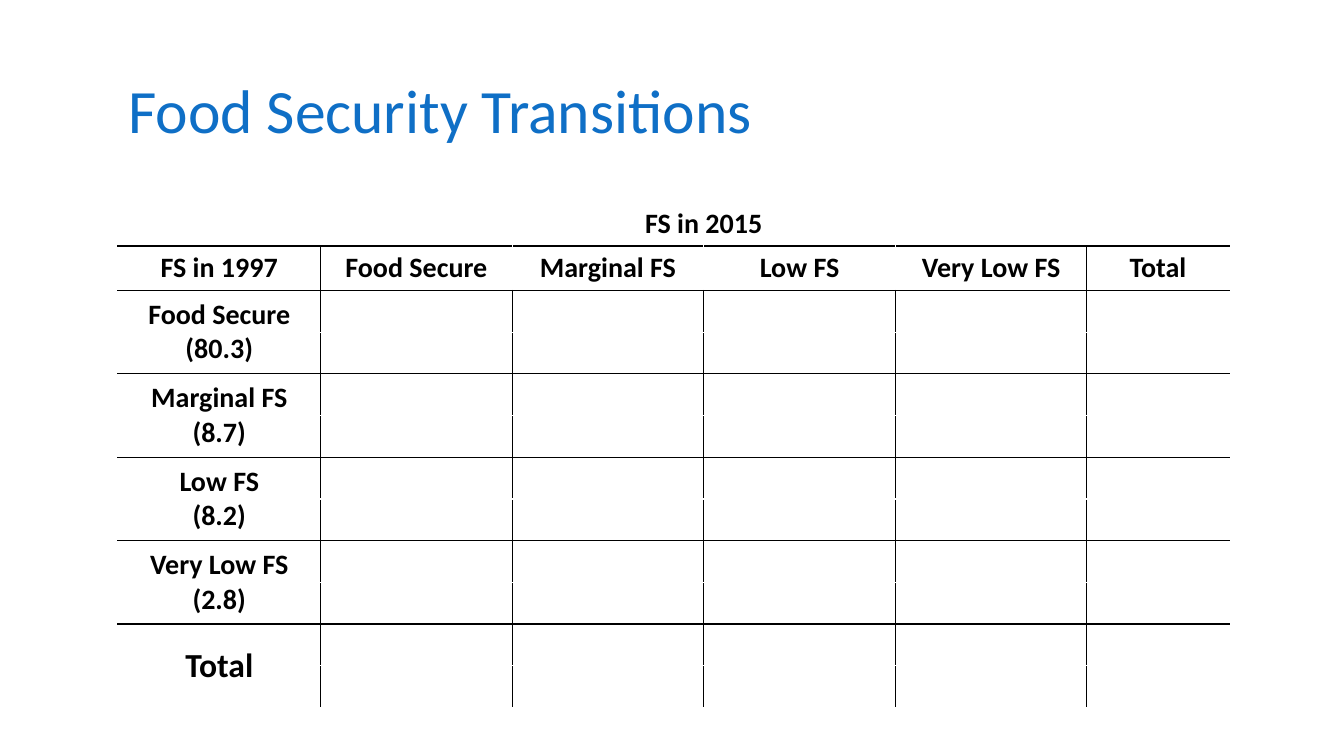
"""Build the food security transitions slide with its empty transition table."""
from lxml import etree
from pptx import Presentation
from pptx.dml.color import RGBColor
from pptx.enum import text
from pptx.oxml import ns
from pptx.util import Inches, Pt

BLUE = RGBColor(0x0F, 0x6F, 0xC6)
BLACK = RGBColor(0, 0, 0)
WHITE = RGBColor(255, 255, 255)
FONT = "Calibri"
TOP, MIDDLE, BOTTOM = (text.MSO_ANCHOR.TOP, text.MSO_ANCHOR.MIDDLE,
                       text.MSO_ANCHOR.BOTTOM)

COLUMN_WIDTHS = [2.01, 1.9, 1.9, 1.9, 1.9, 1.41]
ROW_COUNT = 12
TABLE_HEIGHT = 4.97
HEADINGS = ["FS in 1997", "Food Secure", "Marginal FS", "Low FS", "Very Low FS", "Total"]
SHARES = ["(80.3)", "(8.7)", "(8.2)", "(2.8)"]


def add_border(cell, side, color):
    line = etree.SubElement(cell._tc.get_or_add_tcPr(), ns.qn(f"a:ln{side}"), w=str(Pt(1)))
    fill = etree.SubElement(line, ns.qn("a:solidFill"))
    etree.SubElement(fill, ns.qn("a:srgbClr"), val=str(color))


def write_cell(cell, words, anchor=MIDDLE, size=20):
    cell.vertical_anchor = anchor
    para = cell.text_frame.paragraphs[0]
    para.alignment = text.PP_ALIGN.CENTER
    span = para.add_run()
    span.text = words
    for name, value in {"name": FONT, "size": Pt(size), "bold": True}.items():
        setattr(span.font, name, value)
    span.font.color.rgb = BLACK


deck = Presentation()
deck.slide_width, deck.slide_height = Inches(13.33), Inches(7.5)
page = deck.slides.add_slide(deck.slide_layouts[5])

title = page.shapes.title
place = {"left": 1.17, "top": 0.4, "width": 11, "height": 1.45}
for name, value in place.items():
    setattr(title, name, Inches(value))
title.text_frame.text = "Food Security Transitions"
title.text_frame.auto_size = text.MSO_AUTO_SIZE.NONE
title.text_frame.vertical_anchor = MIDDLE
para = title.text_frame.paragraphs[0]
for name, value in {"alignment": text.PP_ALIGN.LEFT, "line_spacing": 0.9}.items():
    setattr(para, name, value)
font = para.runs[0].font
for name, value in {"name": FONT, "size": Pt(44)}.items():
    setattr(font, name, value)
font.color.rgb = BLUE

table = page.shapes.add_table(ROW_COUNT, len(COLUMN_WIDTHS), Inches(1.17), Inches(2),
                              Inches(11), Inches(TABLE_HEIGHT)).table
table.first_row = table.horz_banding = False
for column, width in zip(table.columns, COLUMN_WIDTHS):
    column.width = Inches(width)

row_edges = [1, 2, 4, 6, 8, 10]
for r, row in enumerate(table.rows):
    row.height = Inches(TABLE_HEIGHT / ROW_COUNT)
    column_edges = [] if r == 0 else [1, 5] if r == 1 else [1, 2, 3, 4, 5]
    for c, cell in enumerate(row.cells):
        sides = {"L": c in column_edges, "R": c + 1 in column_edges,
                 "T": r in row_edges, "B": r + 1 in row_edges}
        for side, ruled in sides.items():
            add_border(cell, side, BLACK if ruled else WHITE)
        cell.fill.solid()
        cell.fill.fore_color.rgb = WHITE

table.cell(0, 1).merge(table.cell(0, 4))
write_cell(table.cell(0, 1), "FS in 2015")
for c, heading in enumerate(HEADINGS):
    write_cell(table.cell(1, c), heading)

for group, (label, share) in enumerate(zip(HEADINGS[1:5], SHARES)):
    for offset, words, anchor in [(2, label, BOTTOM), (3, share, TOP)]:
        cell = table.cell(2 * group + offset, 0)
        write_cell(cell, words, anchor)
        for edge in ["left", "top", "right", "bottom"]:
            setattr(cell, f"margin_{edge}", 0)

table.cell(10, 0).merge(table.cell(11, 0))
write_cell(table.cell(10, 0), "Total", size=24)

deck.save("out.pptx")
